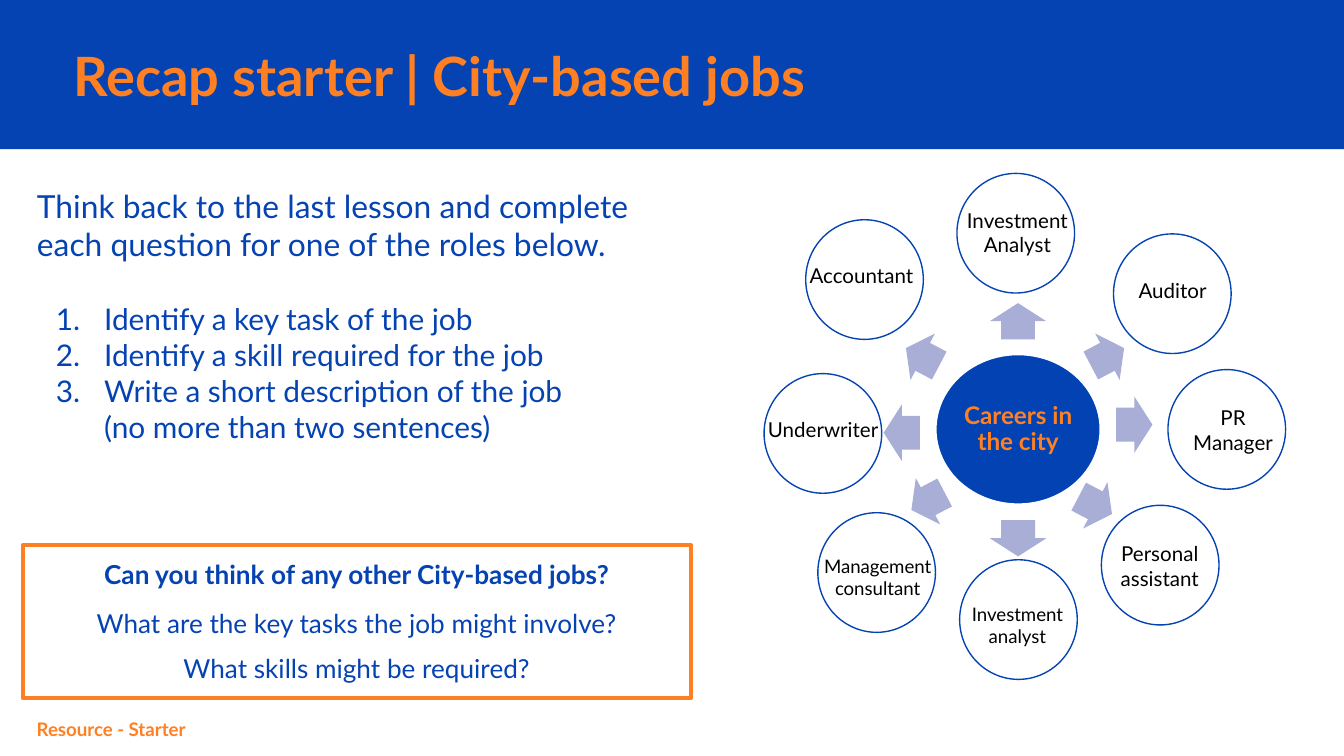
from lxml import etree
from pptx import Presentation
from pptx import util as u
from pptx.dml.color import RGBColor
from pptx.enum import shapes, text
from pptx.oxml import ns

PX = 4572  # EMU per px, 200 px to the inch
FONT = "Lato"
BLUE = RGBColor(0x05, 0x43, 0xB3)
HUB_BLUE = RGBColor(0x02, 0x42, 0xB3)
ORANGE = RGBColor(0xFF, 0x80, 0x22)
LILAC = RGBColor(0xA8, 0xAE, 0xD5)
WHITE = RGBColor(0xFF, 0xFF, 0xFF)
BLACK = RGBColor(0, 0, 0)

LEFT = text.PP_ALIGN.LEFT
CENTER = text.PP_ALIGN.CENTER
TOP = text.MSO_ANCHOR.TOP
MIDDLE = text.MSO_ANCHOR.MIDDLE
SHAPE = shapes.MSO_SHAPE

TASKS = [
    ["Identify a key task of the job"],
    ["Identify a skill required for the job"],
    ["Write a short description of the job", "(no more than two sentences)"],
]

CIRCLE_W, CIRCLE_H = 175, 178
# circle left, circle top, label, size, label left, top, width, height
JOBS = [
    (1424, 258, "Investment Analyst", 11, 1414, 289, 200, 114),
    (1657, 348, "Auditor", 11, 1645, 393, 200, 78),
    (1738, 550, "PR Manager", 11, 1735, 583, 200, 114),
    (1639, 752, "Personal assistant", 11, 1626, 785, 200, 114),
    (1428, 833, "Investment analyst", 10, 1406, 877, 216, 108),
    (1217, 763, "Management consultant", 10, 1198, 805, 216, 108),
    (1137, 556, "Underwriter", 11, 1115, 601, 220, 78),
    (1199, 327, "Accountant", 11, 1182, 371, 200, 78),
]

STRAIGHT, DIAGONAL = (54, 84), (56, 78)
# left, top, size, rotation
ARROWS = [
    (1488, 436, STRAIGHT, 270),
    (1620, 492, DIAGONAL, 332.3),
    (1661, 590, STRAIGHT, 0),
    (1602, 713, DIAGONAL, 27.7),
    (1488, 759, STRAIGHT, 90),
    (1353, 707, DIAGONAL, 152.3),
    (1315, 602, STRAIGHT, 180),
    (1345, 492, DIAGONAL, 207.7),
]


def px(value):
    return u.Emu(value * PX)


def place(box, left, top, width, height):
    box.left, box.top = px(left), px(top)
    box.width, box.height = px(width), px(height)


def set_frame(box, anchor=TOP, inset=20):
    frame = box.text_frame
    frame.word_wrap = True
    frame.auto_size = text.MSO_AUTO_SIZE.NONE
    frame.vertical_anchor = anchor
    frame.margin_left = frame.margin_right = px(inset)
    frame.margin_top = frame.margin_bottom = px(inset)
    return frame


def add_para(frame, first=False, align=LEFT, before=0, spacing=1.0):
    para = frame.paragraphs[0] if first else frame.add_paragraph()
    para.alignment = align
    para.space_before = u.Pt(before)
    para.line_spacing = spacing
    return para


def add_span(para, words, size, color, bold=False):
    span = para.add_run()
    span.text = words
    span.font.name = FONT
    span.font.size = u.Pt(size)
    span.font.bold = bold
    span.font.color.rgb = color


def set_bullet(para, indent=0, hanging=0, numbered=False):
    props = para._p.get_or_add_pPr()
    props.set("marL", str(px(indent)))
    props.set("indent", str(px(-hanging)))
    if numbered:
        color = etree.SubElement(props, ns.qn("a:buClr"))
        etree.SubElement(color, ns.qn("a:srgbClr"), val=str(BLUE))
        etree.SubElement(props, ns.qn("a:buFont"), typeface=FONT)
        etree.SubElement(props, ns.qn("a:buAutoNum"), type="arabicPeriod")
    else:
        etree.SubElement(props, ns.qn("a:buNone"))


def add_figure(page, kind, area, fill=None, line=None, weight=0.75):
    figure = page.shapes.add_shape(kind, *map(px, area))
    figure.shadow.inherit = False
    if fill is None:
        figure.fill.background()
    else:
        figure.fill.solid()
        figure.fill.fore_color.rgb = fill
    if line is None:
        figure.line.fill.background()
    else:
        figure.line.color.rgb = line
        figure.line.width = u.Pt(weight)
    return figure


def add_label(page, area, words, size, color, align=CENTER, bold=False):
    box = page.shapes.add_textbox(*map(px, area))
    para = add_para(set_frame(box), first=True, align=align)
    add_span(para, words, size, color, bold)


def add_title(page):
    title = page.shapes.title
    band = add_figure(page, SHAPE.RECTANGLE, (0, 0, 2000, 222), BLUE)
    title.element.addprevious(band.element)
    place(title, 89, 43, 1870, 136)
    para = add_para(set_frame(title, MIDDLE), first=True)
    add_span(para, "Recap starter | City-based jobs", 29, ORANGE, True)


def add_tasks(page):
    body = page.placeholders[1]
    place(body, 35, 258, 994, 428)
    frame = set_frame(body)
    intro = add_para(frame, first=True)
    set_bullet(intro)
    add_span(intro, "Think back to the last lesson and complete "
             "each question for one of the roles below.", 17, BLUE)
    for number, lines in enumerate(TASKS):
        para = add_para(frame, before=0 if number else 20.4)
        set_bullet(para, 100, 72, numbered=True)
        for row, words in enumerate(lines):
            if row:
                para.add_line_break()
            add_span(para, words, 16, BLUE)


def add_questions(page):
    box = add_figure(page, SHAPE.RECTANGLE, (34, 811, 994, 228),
                     line=ORANGE, weight=2.25)
    frame = set_frame(box)
    questions = [
        ("Can you think of any other City-based jobs?", 0),
        ("What are the key tasks the job might involve?", 9.6),
        ("What skills might be required?", 7.2),
    ]
    for number, (words, before) in enumerate(questions):
        para = add_para(frame, number == 0, CENTER, before)
        add_span(para, words, 14, BLUE, bold=number == 0)


def add_careers(page):
    # Hub
    hub = add_figure(page, SHAPE.OVAL, (1391, 526, 248, 226), HUB_BLUE, WHITE, 2)
    para = add_para(set_frame(hub, MIDDLE, 2), True, CENTER, spacing=0.9)
    add_span(para, "Careers in the city", 13, ORANGE, True)
    # Arrows pointing out from the hub
    for left, top, size, rotation in ARROWS:
        arrow = add_figure(page, SHAPE.RIGHT_ARROW, (left, top, *size), LILAC)
        arrow.adjustments[0] = 0.6
        arrow.adjustments[1] = 0.5
        arrow.rotation = rotation
    # Job circles and their labels
    for left, top, words, size, *area in JOBS:
        add_figure(page, SHAPE.OVAL, (left, top, CIRCLE_W, CIRCLE_H), line=BLUE)
        add_label(page, area, words, size, BLACK)


def main():
    deck = Presentation()
    deck.slide_width, deck.slide_height = px(2000), px(1125)
    page = deck.slides.add_slide(deck.slide_layouts[1])
    add_title(page)
    add_tasks(page)
    add_questions(page)
    add_careers(page)
    # Footer
    add_label(page, (35, 1049, 1632, 74), "Resource - Starter", 10, ORANGE,
              LEFT, True)
    deck.save("out.pptx")


if __name__ == "__main__":
    main()
